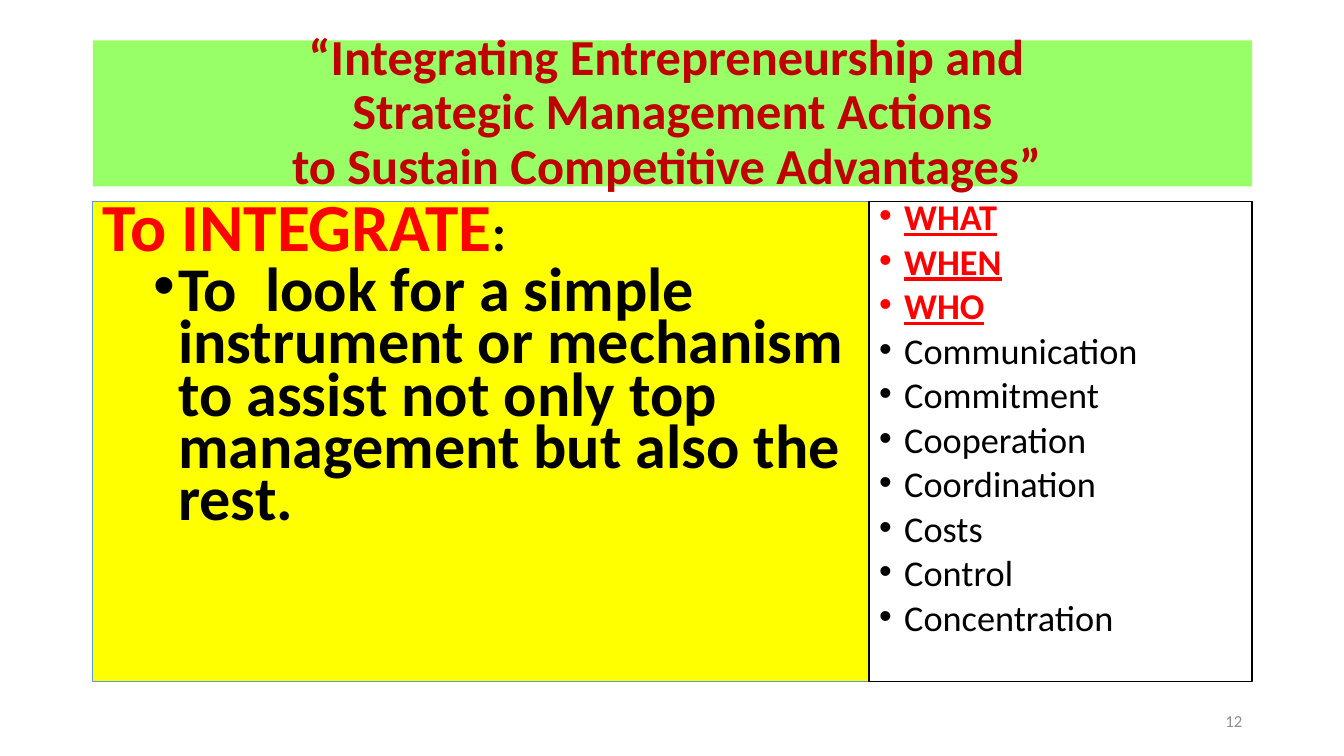
import pptx
import pptx.util
import pptx.dml.color
import pptx.enum.shapes
import pptx.enum.text
import lxml.etree

Inches = pptx.util.Inches
Pt = pptx.util.Pt
RGBColor = pptx.dml.color.RGBColor
Align = pptx.enum.text.PP_ALIGN
Anchor = pptx.enum.text.MSO_ANCHOR

GREEN = RGBColor(0x99, 0xFF, 0x66)
YELLOW = RGBColor(0xFF, 0xFF, 0x00)
WHITE = RGBColor(0xFF, 0xFF, 0xFF)
BLACK = RGBColor(0x00, 0x00, 0x00)
RED = RGBColor(0xFF, 0x00, 0x00)
DARK_RED = RGBColor(0xC0, 0x00, 0x00)
BLUE = RGBColor(0x5B, 0x9B, 0xD5)
GRAY = RGBColor(0x8C, 0x8C, 0x8C)

TITLE_LINES = [
    "“Integrating Entrepreneurship and ",
    "Strategic Management Actions",
    "to Sustain Competitive Advantages” ",
]
HEADING = "To INTEGRATE"
AIM = ("To  look for a simple instrument or mechanism to assist "
       "not only top management but also the rest.")
QUESTIONS = ["WHAT", "WHEN", "WHO"]
FACTORS = ["Communication", "Commitment", "Cooperation", "Coordination",
           "Costs", "Control", "Concentration"]
PAGE_NUMBER = "12"

LEFT = 0.92
PANEL_TOP, PANEL_HEIGHT = 2, 4.76
AIM_WIDTH, LIST_WIDTH = 7.7, 3.8


def add_span(para, text, size, color, bold=False, underline=False):
    span = para.add_run()
    span.text = text
    font = span.font
    font.name = "Calibri"
    font.size = Pt(size)
    font.color.rgb = color
    font.bold = bold
    font.underline = underline


def add_panel(page, left, width, fill, line):
    """Add a bordered box and return its text frame."""
    box = page.shapes.add_shape(
        pptx.enum.shapes.MSO_SHAPE.RECTANGLE, Inches(left), Inches(PANEL_TOP),
        Inches(width), Inches(PANEL_HEIGHT))
    box.shadow.inherit = False
    box.fill.solid()
    box.fill.fore_color.rgb = fill
    box.line.color.rgb = line
    box.line.width = Pt(1)
    frame = box.text_frame
    frame.word_wrap = True
    frame.vertical_anchor = Anchor.TOP
    return frame


def add_para(frame, space_before, margin=0):
    """Start a tight paragraph; a margin makes it a bullet."""
    first = frame.paragraphs[0]
    para = frame.add_paragraph() if first.runs else first
    para.alignment = Align.LEFT
    para.line_spacing = 0.7
    para.space_before = Pt(space_before)
    if margin:
        properties = para._p.get_or_add_pPr()
        properties.set("marL", str(Inches(margin)))
        properties.set("indent", str(Inches(-0.25)))
        for tag, name, value in (("a:buFont", "typeface", "Arial"),
                                 ("a:buChar", "char", "•")):
            mark = lxml.etree.SubElement(properties, pptx.oxml.ns.qn(tag))
            mark.set(name, value)
    return para


def add_title(page):
    title = page.shapes.title
    title.left, title.top = Inches(LEFT), Inches(0.4)
    title.width, title.height = Inches(11.5), Inches(1.45)
    title.fill.solid()
    title.fill.fore_color.rgb = GREEN
    frame = title.text_frame
    frame.word_wrap = True
    frame.auto_size = pptx.enum.text.MSO_AUTO_SIZE.NONE
    frame.vertical_anchor = Anchor.MIDDLE
    para = frame.paragraphs[0]
    para.alignment = Align.CENTER
    para.line_spacing = 0.9
    for index, line in enumerate(TITLE_LINES):
        if index:
            para.add_line_break()
        add_span(para, line, 36, DARK_RED, bold=True)


def add_page_number(page):
    box = page.shapes.add_textbox(Inches(9.42), Inches(6.95), Inches(3), Inches(0.4))
    frame = box.text_frame
    frame.word_wrap = True
    frame.vertical_anchor = Anchor.MIDDLE
    para = frame.paragraphs[0]
    para.alignment = Align.RIGHT
    add_span(para, PAGE_NUMBER, 12, GRAY)


def main():
    deck = pptx.Presentation()
    deck.slide_width, deck.slide_height = Inches(13.33), Inches(7.5)
    page = deck.slides.add_slide(deck.slide_layouts.get_by_name("Title Only"))
    add_title(page)

    aim = add_panel(page, LEFT, AIM_WIDTH, YELLOW, BLUE)
    heading = add_para(aim, 10)
    add_span(heading, HEADING, 48.1, RED, bold=True)
    add_span(heading, ":", 37, BLACK, bold=True)
    add_span(add_para(aim, 5, 0.75), AIM, 44.4, BLACK, bold=True)

    add_page_number(page)

    checklist = add_panel(page, LEFT + AIM_WIDTH, LIST_WIDTH, WHITE, BLACK)
    for word in QUESTIONS:
        add_span(add_para(checklist, 10, 0.25), word, 25.9, RED, True, True)
    for word in FACTORS:
        add_span(add_para(checklist, 10, 0.25), word, 25.9, BLACK)

    deck.save("out.pptx")


if __name__ == "__main__":
    main()
